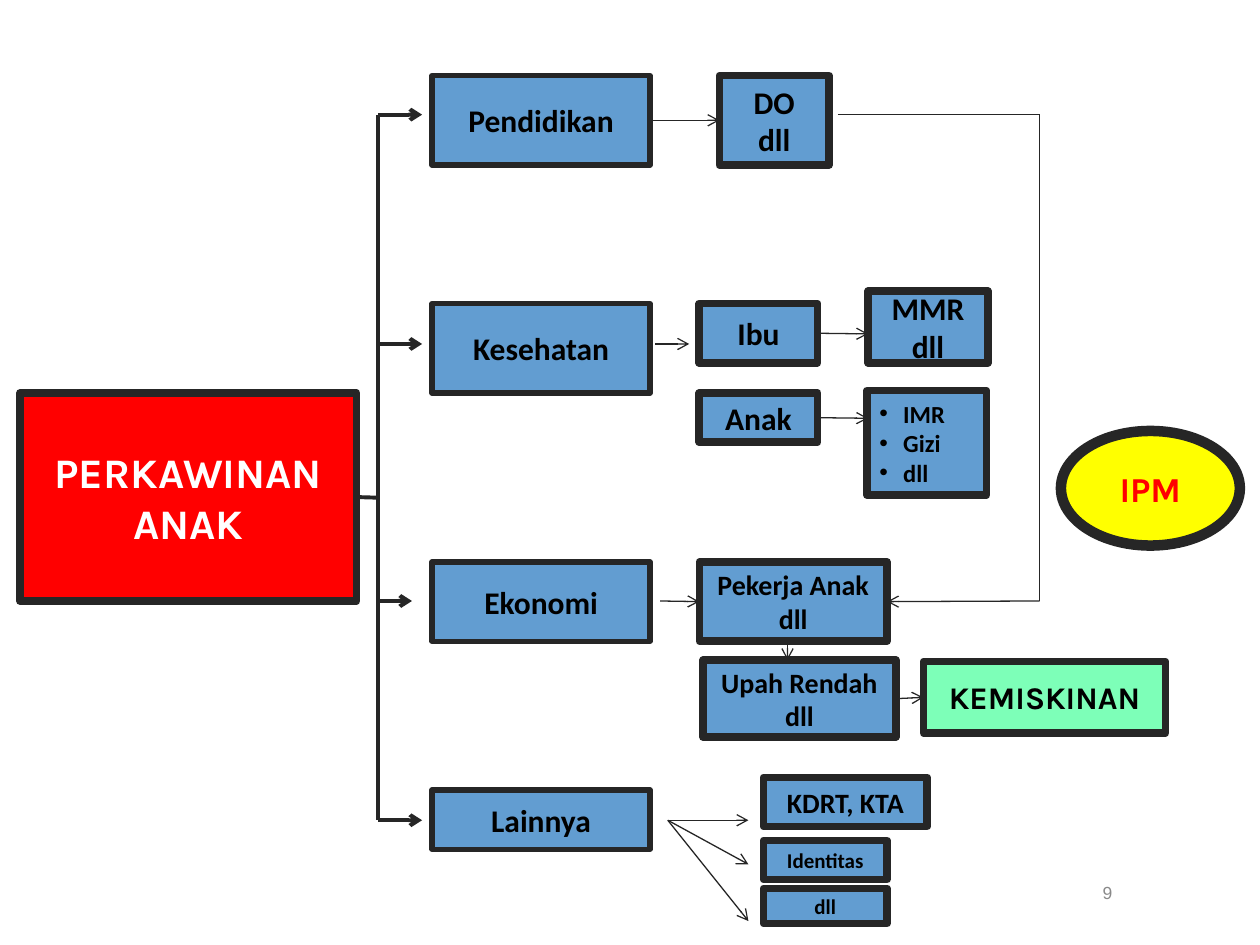
from dataclasses import dataclass
from typing import Any

from lxml import etree
from pptx import Presentation
from pptx import util as u
from pptx.dml.color import RGBColor
from pptx.enum import shapes, text
from pptx.oxml.ns import qn

TOP, LEFT, BOTTOM, RIGHT = range(4)


def color(hex_string):
    return RGBColor.from_string(hex_string)


def write(frame, content, size=18, font="Calibri", hue="000000", bold=True,
          bullets=False):
    """Fill a text frame, one paragraph for each line of content."""
    frame.word_wrap = True
    frame.vertical_anchor = text.MSO_ANCHOR.MIDDLE
    for index, line in enumerate(content.split("\n")):
        paragraph = frame.paragraphs[0] if index == 0 else frame.add_paragraph()
        paragraph.alignment = text.PP_ALIGN.LEFT if bullets else text.PP_ALIGN.CENTER
        if bullets:
            properties = paragraph._p.get_or_add_pPr()
            properties.set("marL", str(u.Inches(0.19)))
            properties.set("indent", str(u.Inches(-0.19)))
            etree.SubElement(properties, qn("a:buFont"), typeface="Arial")
            etree.SubElement(properties, qn("a:buChar"), char="•")
        run = paragraph.add_run()
        run.text = line
        run.font.size = u.Pt(size)
        run.font.name = font
        run.font.bold = bold
        run.font.color.rgb = color(hue)


@dataclass
class Diagram:
    slide: Any
    line_color: str = "262626"
    box_fill: str = "629DD1"
    box_line: float = 4.33

    def box(self, content, left, top, width, height, fill=None, line=None,
            kind=shapes.MSO_SHAPE.RECTANGLE, **text_format):
        shape = self.slide.shapes.add_shape(
            kind, *map(u.Inches, (left, top, width, height)))
        shape.shadow.inherit = False
        shape.fill.solid()
        shape.fill.fore_color.rgb = color(fill or self.box_fill)
        shape.line.color.rgb = color(self.line_color)
        shape.line.width = u.Pt(line or self.box_line)
        write(shape.text_frame, content, **text_format)
        return shape

    def line(self, start, end, width=0.75, arrow=True, begin=None, finish=None,
             behind=True):
        """Draw a line; begin and finish are (shape, side) pairs to join."""
        connector = self.slide.shapes.add_connector(
            shapes.MSO_CONNECTOR.STRAIGHT, *map(u.Inches, (*start, *end)))
        connector.line.color.rgb = color(self.line_color)
        connector.line.width = u.Pt(width)
        if arrow:
            etree.SubElement(connector.line._get_or_add_ln(), qn("a:tailEnd"),
                             type="arrow")
        etree.SubElement(connector._element.spPr, qn("a:effectLst"))
        if begin:
            connector.begin_connect(*begin)
        if finish:
            connector.end_connect(*finish)
        if behind:
            self.slide.shapes._spTree.insert(2, connector._element)

    def label(self, content, left, top, width, height, **text_format):
        frame = self.slide.shapes.add_textbox(
            *map(u.Inches, (left, top, width, height))).text_frame
        frame.margin_left = frame.margin_right = 0
        frame.margin_top = frame.margin_bottom = 0
        write(frame, content, **text_format)


def main():
    presentation = Presentation()
    presentation.slide_width = u.Inches(10)
    presentation.slide_height = u.Inches(7.5)
    diagram = Diagram(presentation.slides.add_slide(presentation.slide_layouts[6]))

    # Root cause and its trunk
    trunk = 3
    root = diagram.box("PERKAWINAN ANAK", 0.16, 3.12, 2.67, 1.65, fill="FF0000",
                       line=4.5, size=24, font="Karla", hue="FFFFFF")
    diagram.line((2.84, 3.95), (trunk, 3.95), 2.25, arrow=False, begin=(root, RIGHT))
    diagram.line((trunk, 0.91), (trunk, 6.51), 2.25, arrow=False)

    # Four affected fields: name, top, height, arrow level, arrow end
    fields = {}
    for name, top, height, level, end in (
            ("Pendidikan", 0.6, 0.71, 0.91, 3.35),
            ("Kesehatan", 2.41, 0.71, 2.73, 3.35),
            ("Ekonomi", 4.46, 0.63, 4.77, 3.27),
            ("Lainnya", 6.27, 0.47, 6.51, 3.35)):
        fields[name] = diagram.box(name, 3.43, top, 1.73, height, line=3)
        diagram.line((trunk, level), (end, level), 2.25)

    # Education
    dropout = diagram.box("DO\ndll", 5.71, 0.6, 0.87, 0.71)
    diagram.line((5.16, 0.95), (5.71, 0.95), begin=(fields["Pendidikan"], RIGHT),
                 finish=(dropout, LEFT))

    # Health
    mother = diagram.box("Ibu", 5.55, 2.41, 0.94, 0.47)
    child = diagram.box("Anak", 5.55, 3.12, 0.94, 0.39)
    diagram.box("MMR\ndll", 6.89, 2.31, 0.95, 0.57)
    diagram.box("IMR\nGizi\ndll", 6.88, 3.1, 0.95, 0.83, size=14, bullets=True)
    diagram.line((5.2, 2.73), (5.47, 2.73))
    diagram.line((6.5, 2.65), (6.89, 2.65), begin=(mother, RIGHT))
    diagram.line((6.5, 3.32), (6.89, 3.32), begin=(child, RIGHT))

    # Economy
    labour = diagram.box("Pekerja Anak\ndll", 5.55, 4.46, 1.49, 0.63, size=16)
    wages = diagram.box("Upah Rendah\ndll", 5.58, 5.24, 1.53, 0.61, size=16)
    poverty = diagram.box("KEMISKINAN", 7.33, 5.25, 1.92, 0.57, fill="7DFFB8",
                          font="Karla")
    diagram.line((5.24, 4.77), (5.55, 4.77), finish=(labour, LEFT))
    diagram.line((6.25, 5.08), (6.25, 5.24))
    diagram.line((7.11, 5.54), (7.33, 5.54), begin=(wages, RIGHT),
                 finish=(poverty, LEFT))

    # Other effects
    for name, left_box, arrow_end in (
            ("KDRT, KTA", (6.17, 1.3, 0.39, 16), 6.51),
            ("Identitas", (6.67, 0.98, 0.31, 12), 6.86),
            ("dll", (7.05, 0.98, 0.28, 12), 7.31)):
        top, width, height, size = left_box
        diagram.box(name, 6.06, top, width, height, size=size)
        diagram.line((5.3, 6.51), (5.94, arrow_end))

    # Path from dropping out to child labour
    diagram.line((6.65, 0.91), (8.25, 0.91), arrow=False)
    diagram.line((8.25, 0.91), (8.25, 4.77), arrow=False)
    diagram.line((8.25, 4.77), (7.05, 4.77), finish=(labour, RIGHT), behind=False)

    # Index and page number
    diagram.box("IPM", 8.42, 3.42, 1.42, 0.91, fill="FFFF00", line=6,
                kind=shapes.MSO_SHAPE.OVAL, size=20, font="Karla", hue="FF0000")
    diagram.label("9", 8.5, 7, 0.58, 0.17, size=10, font="Arial", hue="898989",
                  bold=False)

    presentation.save("out.pptx")


if __name__ == "__main__":
    main()
